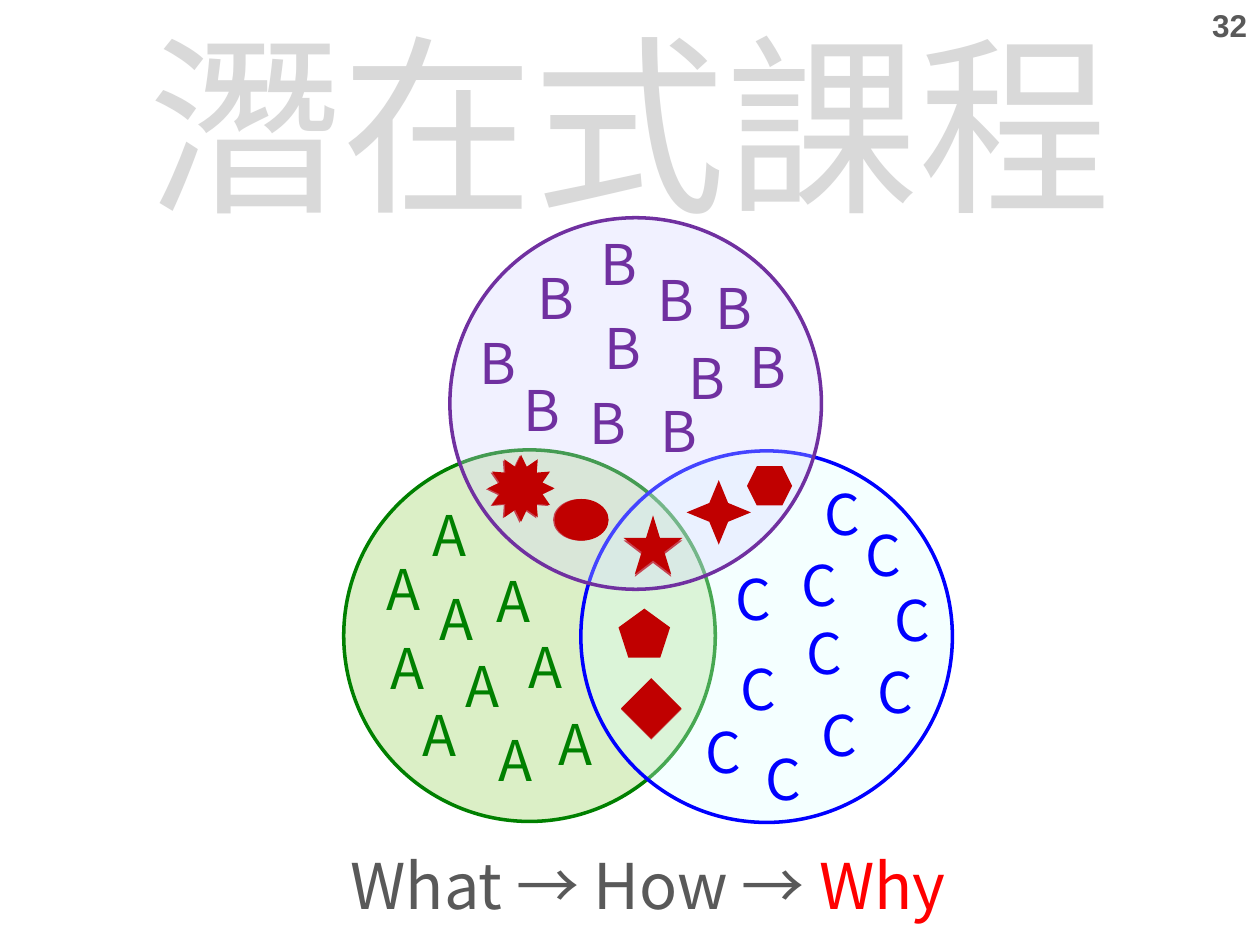
from dataclasses import dataclass

from lxml.etree import SubElement
from pptx import Presentation
from pptx.dml.color import RGBColor
from pptx.enum.shapes import MSO_SHAPE as Preset
from pptx.enum.text import MSO_ANCHOR as Anchor, MSO_AUTO_SIZE as AutoSize, PP_ALIGN as Align
from pptx.oxml.ns import qn
from pptx.util import Cm, Pt

BODY_FONT = "Noto Sans CJK JP"
TITLE_FONT = "Noto Sans CJK SC"
GREY, RED, DARK_RED = "595959", "FF0000", "C00000"
CIRCLE_SIZE = 7.49
LETTER_WIDTH, LETTER_HEIGHT = 1.3, 1.63


@dataclass
class Mark:
    """A dark red symbol shared between circles; lengths in cm."""
    preset: Preset
    left: float
    top: float
    width: float
    height: float
    adjustment: float | None = None


@dataclass
class Circle:
    """One set of the Venn diagram with its letters and shared marks."""
    letter: str
    left: float
    top: float
    fill: str
    line: str
    letter_spots: list[tuple[float, float]]
    marks: list[Mark]


def star12(left: float, top: float) -> Mark:
    return Mark(Preset.STAR_12_POINT, left, top, 1.35, 1.35, 0.332)


def oval(left: float, top: float) -> Mark:
    return Mark(Preset.OVAL, left, top, 1.09, 0.84)


def diamond(left: float, top: float) -> Mark:
    return Mark(Preset.DIAMOND, left, top, 1.22, 1.22)


def star5(left: float, top: float) -> Mark:
    return Mark(Preset.STAR_5_POINT, left, top, 1.19, 1.19)


CIRCLES = [
    Circle("A", 6.93, 9.07, "92D050", "008000",
           [(8.46, 9.96), (8.26, 14), (10.41, 12.62), (9.75, 11.3), (9.14, 13),
            (11, 14.17), (9.8, 14.5), (7.54, 11.05), (8.61, 11.66), (7.62, 12.65)],
           [star12(9.8, 9.19), oval(11.15, 10.06), diamond(12.52, 13.69)]),
    Circle("C", 11.71, 9.09, "DDFFFF", "0000FF",
           [(16.31, 14), (16.38, 9.55), (15.9, 10.97), (14.58, 11.25), (16, 12.34),
            (17.78, 11.68), (17.45, 13.13), (14.68, 13.06), (13.97, 14.33),
            (15.19, 14.88), (17.2, 10.36)],
           [Mark(Preset.REGULAR_PENTAGON, 12.47, 12.27, 1.04, 0.99),
            diamond(12.52, 13.67), star5(12.57, 10.44)]),
    Circle("B", 9.07, 4.39, "D5D5FF", "7030A0",
           [(10.59, 5.18), (11.86, 4.5), (13, 5.23), (11.94, 6.2), (13.64, 6.81),
            (14.86, 6.58), (13.06, 7.87), (9.42, 6.5), (10.31, 7.44), (11.63, 7.7),
            (14.17, 5.38)],
           [star5(12.57, 10.39), Mark(Preset.HEXAGON, 15.06, 9.4, 0.91, 0.79),
            Mark(Preset.STAR_4_POINT, 13.84, 9.68, 1.3, 1.3, 0.206),
            star12(9.83, 9.17), oval(11.18, 10.06)]),
]


def rgb(color: str) -> RGBColor:
    return RGBColor.from_string(color)


def place(shape, left: float, top: float, width: float, height: float) -> None:
    shape.left, shape.top, shape.width, shape.height = map(Cm, (left, top, width, height))


def write(shape, runs: list[tuple[str, str]], size: float, font_name: str = BODY_FONT,
          align: Align = Align.CENTER, wrap: bool = False, bold: bool = False) -> None:
    """Write one paragraph of (text, colour) runs."""
    frame = shape.text_frame
    frame.word_wrap = wrap
    frame.auto_size = AutoSize.NONE
    frame.vertical_anchor = Anchor.TOP
    paragraph = frame.paragraphs[0]
    paragraph.alignment = align
    font = paragraph.font
    font.size, font.bold, font.name = Pt(size), bold, font_name
    font.color.rgb = rgb(runs[0][1])
    east_asian = SubElement(paragraph._p.pPr.find(qn("a:defRPr")), qn("a:ea"))
    east_asian.set("typeface", font_name)
    for text, color in runs:
        run = paragraph.add_run()
        run.text = text
        if color != runs[0][1]:
            run.font.color.rgb = rgb(color)


def add_text(slide, left: float, top: float, width: float, height: float,
             runs: list[tuple[str, str]], size: float, **style) -> None:
    box = slide.shapes.add_textbox(Cm(left), Cm(top), Cm(width), Cm(height))
    write(box, runs, size, **style)


def add_filled(slide, mark: Mark, fill: str):
    shape = slide.shapes.add_shape(
        mark.preset, Cm(mark.left), Cm(mark.top), Cm(mark.width), Cm(mark.height))
    shape.shadow.inherit = False
    shape.fill.solid()
    shape.fill.fore_color.rgb = rgb(fill)
    shape.line.fill.background()
    if mark.adjustment is not None:
        shape.adjustments[0] = mark.adjustment
    return shape


def add_circle(slide, circle: Circle) -> None:
    outline = Mark(Preset.OVAL, circle.left, circle.top, CIRCLE_SIZE, CIRCLE_SIZE)
    disc = add_filled(slide, outline, circle.fill)
    disc.line.color.rgb = rgb(circle.line)
    disc.line.width = Pt(2)
    # Let the overlapping circles show through
    fill_color = disc._element.spPr.find(qn("a:solidFill"))[0]
    SubElement(fill_color, qn("a:alpha")).set("val", "32000")

    for left, top in circle.letter_spots:
        add_text(slide, left, top, LETTER_WIDTH, LETTER_HEIGHT,
                 [(circle.letter, circle.line)], 32, align=Align.LEFT)
    for mark in circle.marks:
        add_filled(slide, mark, DARK_RED)


def main() -> None:
    deck = Presentation()
    deck.slide_width, deck.slide_height = Cm(25.4), Cm(19.05)
    slide = deck.slides.add_slide(deck.slide_layouts[5])

    # Title and page number
    title = slide.shapes.title
    place(title, 0, 0, 25.4, 4.95)
    write(title, [("潛在式課程", "D9D9D9")], 110, font_name=TITLE_FONT, wrap=True)
    add_text(slide, 24.18, 0, 1.22, 1.02, [("32", GREY)], 18, font_name="Arial", bold=True)

    # Venn diagram
    for circle in CIRCLES:
        add_circle(slide, circle)

    # Closing line
    add_text(slide, 6.73, 16.94, 12.67, 1.8,
             [("What → How → ", GREY), ("Why", RED)], 36)

    deck.save("out.pptx")


if __name__ == "__main__":
    main()
